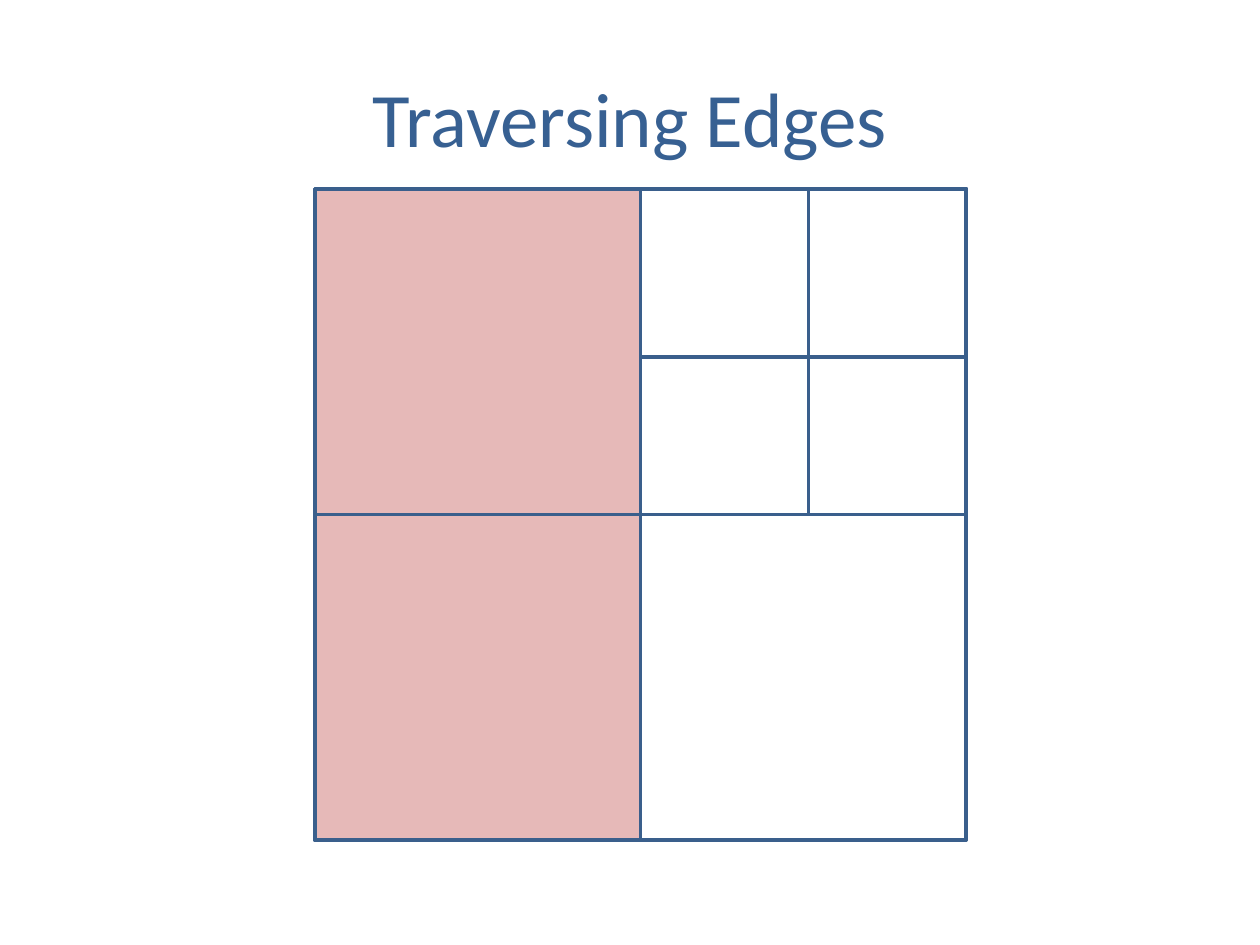
from dataclasses import dataclass

from pptx import Presentation
from pptx.dml.color import RGBColor
from pptx.enum.shapes import MSO_SHAPE
from pptx.enum.text import MSO_ANCHOR, PP_ALIGN
from pptx.util import Pt


@dataclass(frozen=True)
class Theme:
    title: RGBColor = RGBColor.from_string("376092")
    edge: RGBColor = RGBColor.from_string("3A5F8C")
    marked: RGBColor = RGBColor.from_string("E6B9B8")
    font: str = "Calibri"
    title_size: int = 44
    edge_width: int = 2


theme = Theme()

prs = Presentation()
prs.slide_width, prs.slide_height = Pt(720), Pt(540)
s = prs.slides.add_slide(prs.slide_layouts[6])


def add_text(text, *, left, top, width, height, size, color):
    tf = s.shapes.add_textbox(Pt(left), Pt(top), Pt(width), Pt(height)).text_frame
    tf.word_wrap = True
    tf.vertical_anchor = MSO_ANCHOR.MIDDLE
    p = tf.paragraphs[0]
    p.alignment = PP_ALIGN.CENTER
    r = p.add_run()
    r.text = text
    r.font.name = theme.font
    r.font.size = Pt(size)
    r.font.color.rgb = color


def add_cell(left, top, width, height, fill=None):
    sp = s.shapes.add_shape(MSO_SHAPE.RECTANGLE, Pt(left), Pt(top), Pt(width), Pt(height))
    sp.shadow.inherit = False
    sp.line.color.rgb = theme.edge
    sp.line.width = Pt(theme.edge_width)
    if fill is None:
        sp.fill.background()
    else:
        sp.fill.solid()
        sp.fill.fore_color.rgb = fill


add_text("Traversing Edges", left=36, top=21.6, width=648, height=90,
         size=theme.title_size, color=theme.title)

left, top, side = 180, 108, 372
half = side / 2
mid = left + half

add_cell(left, top, side, side)
for y in (top, top + half):
    add_cell(left, y, half, half, theme.marked)
    add_cell(mid, y, half, half)

first = 96
parts = ((0, first), (first, half - first))
for dx, width in parts:
    for dy, height in parts:
        add_cell(mid + dx, top + dy, width, height)

prs.save("out.pptx")
